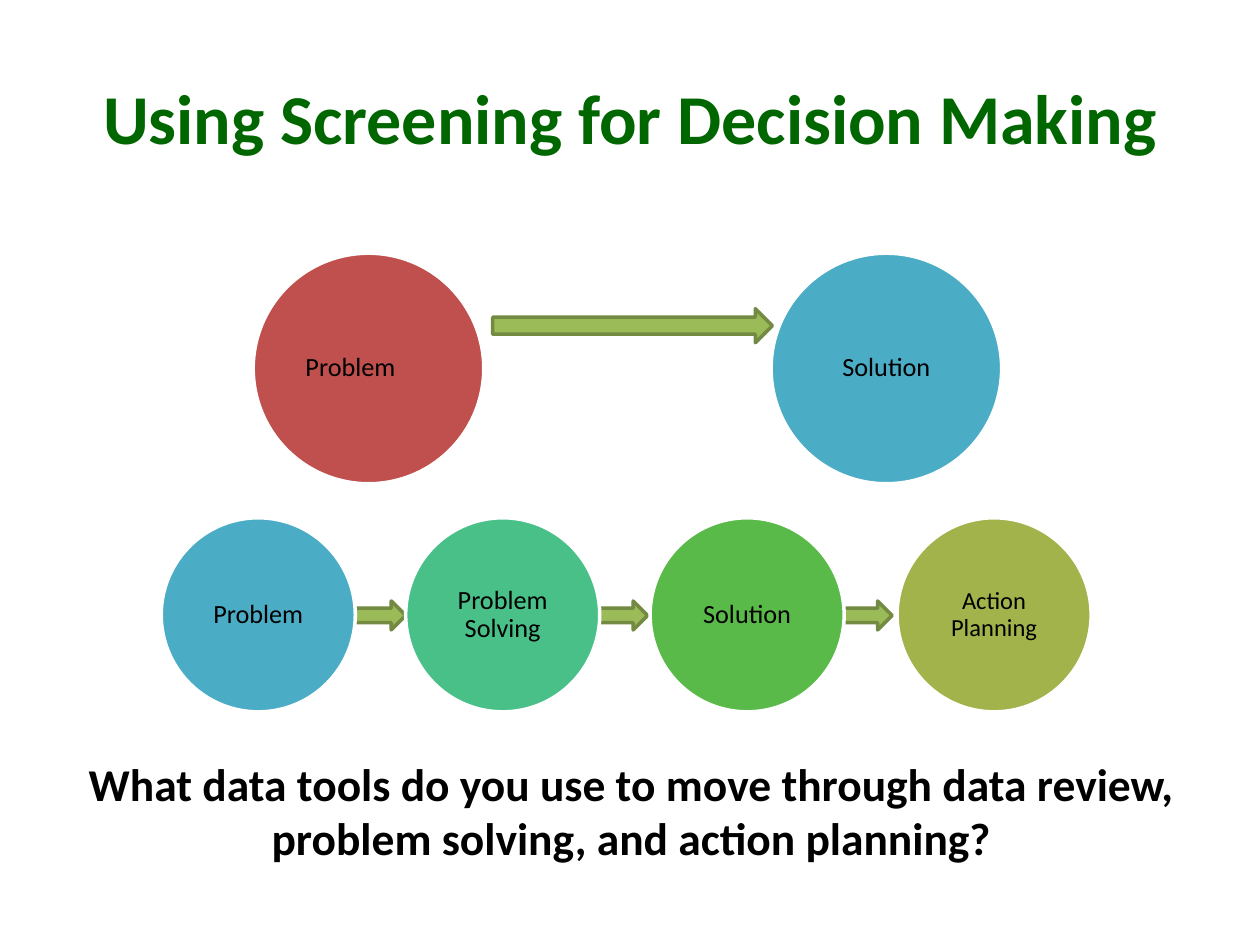
from pptx import Presentation
from pptx.dml.color import RGBColor
from pptx.enum.shapes import MSO_SHAPE
from pptx.enum.text import MSO_ANCHOR, PP_ALIGN
from pptx.util import Inches, Pt

BLACK = RGBColor(0x00, 0x00, 0x00)
WHITE = RGBColor(0xFF, 0xFF, 0xFF)
GREEN = RGBColor(0x00, 0x66, 0x00)
RED = RGBColor(0xC0, 0x50, 0x4D)
BLUE = RGBColor(0x4B, 0xAC, 0xC6)
TEAL = RGBColor(0x4A, 0xC0, 0x89)
LEAF = RGBColor(0x5A, 0xBA, 0x49)
OLIVE = RGBColor(0xA1, 0xB3, 0x4A)
ARROW_FILL = RGBColor(0x9B, 0xBB, 0x59)
ARROW_LINE = RGBColor(0x73, 0x8A, 0x42)

TITLE = "Using Screening for Decision Making"
QUESTION = ("What data tools do you use to move through data review, "
            "problem solving, and action planning?")
ROWS = [
    {"top": 2.01, "size": 1.83, "circles": [
        ("Problem\t", 2.01, RED, 15),
        ("Solution", 6.12, BLUE, 15)]},
    {"top": 4.11, "size": 1.54, "circles": [
        ("Problem", 1.28, BLUE, 15),
        ("Problem Solving", 3.22, TEAL, 15),
        ("Solution", 5.16, LEAF, 15),
        ("Action Planning", 7.12, OLIVE, 14)]},
]
ARROWS = [
    (3.91, 2.45, 2.22, 0.27),
    (6.66, 4.77, 0.42, 0.23),
    (4.72, 4.77, 0.42, 0.23),
    (2.8, 4.77, 0.42, 0.23),
]
INSET_X, INSET_Y = 0.39, 0.32
OVAL_TEXT_EDGE = 0.146


def write(tf, text, size, color, bold=False):
    tf.word_wrap = True
    p = tf.paragraphs[0]
    p.alignment = PP_ALIGN.CENTER
    r = p.add_run()
    r.text = text
    for name, value in {"name": "Calibri", "size": Pt(size), "bold": bold}.items():
        setattr(r.font, name, value)
    r.font.color.rgb = color
    return p


def add_figure(s, kind, box, fill, line):
    sp = s.shapes.add_shape(kind, *map(Inches, box))
    sp.shadow.inherit = False
    sp.fill.solid()
    sp.fill.fore_color.rgb = fill
    sp.line.color.rgb = line
    sp.line.width = Pt(2)
    return sp


def add_circle(s, text, left, top, size, fill, points):
    sp = add_figure(s, MSO_SHAPE.OVAL, (left, top, size, size), fill, WHITE)
    tf = sp.text_frame
    edge = OVAL_TEXT_EDGE * size
    margins = {"left": INSET_X, "right": INSET_X, "top": INSET_Y, "bottom": INSET_Y}
    for side, inset in margins.items():
        setattr(tf, f"margin_{side}", Inches(inset - edge))
    tf.vertical_anchor = MSO_ANCHOR.MIDDLE
    write(tf, text, points, BLACK).line_spacing = 0.9


def main():
    prs = Presentation()
    prs.slide_width, prs.slide_height = Inches(10), Inches(7.5)
    s = prs.slides.add_slide(prs.slide_layouts[5])

    for box in ARROWS:
        add_figure(s, MSO_SHAPE.RIGHT_ARROW, box, ARROW_FILL, ARROW_LINE)

    for row in reversed(ROWS):
        for text, left, fill, points in row["circles"]:
            add_circle(s, text, left, row["top"], row["size"], fill, points)

    sp = s.shapes.add_textbox(*map(Inches, (0.45, 5.95, 9.13, 0.98)))
    write(sp.text_frame, QUESTION, 26, BLACK, bold=True)

    sp = s.shapes.title
    sp.left, sp.top, sp.width, sp.height = map(Inches, (0.5, 0.3, 9, 1.25))
    sp.text_frame.vertical_anchor = MSO_ANCHOR.MIDDLE
    write(sp.text_frame, TITLE, 40, GREEN, bold=True)

    prs.save("out.pptx")


if __name__ == "__main__":
    main()
